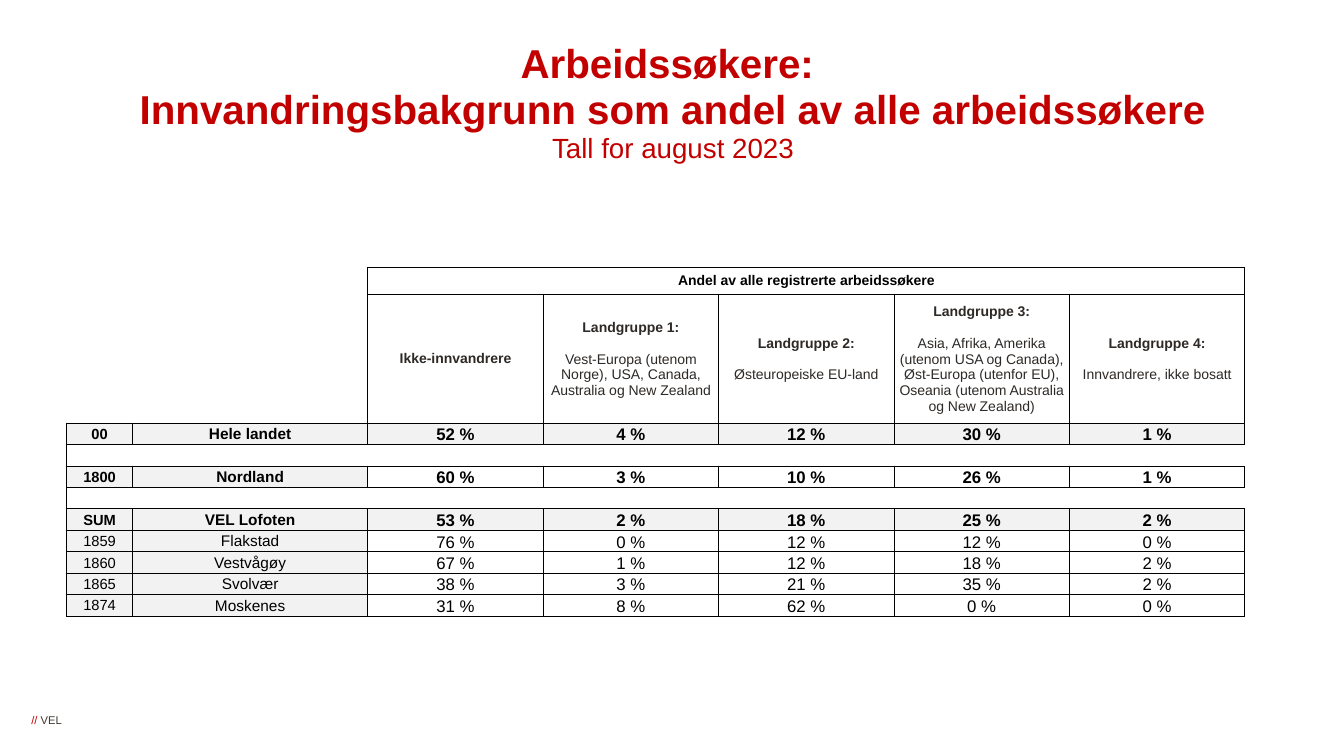
from lxml import etree
from pptx import Presentation
from pptx.dml.color import RGBColor
from pptx.enum.text import MSO_ANCHOR, PP_ALIGN
from pptx.oxml.ns import qn
from pptx.util import Cm, Pt

CENTER = PP_ALIGN.CENTER
MIDDLE, BOTTOM = MSO_ANCHOR.MIDDLE, MSO_ANCHOR.BOTTOM
RED = RGBColor(0xC3, 0x00, 0x00)
BROWN = RGBColor(0x3E, 0x38, 0x32)
CHARCOAL = RGBColor(0x2D, 0x29, 0x26)
BLACK = RGBColor(0, 0, 0)
WHITE = RGBColor(0xFF, 0xFF, 0xFF)
GREY = RGBColor(0xF2, 0xF2, 0xF2)
FONT = "Arial"
NO_GRID_STYLE = "{2D5ABB26-0587-4C30-8999-92F81FD0307C}"

TITLE_LINES = [
    ("Arbeidssøkere: ", 28.8, True),
    ("Innvandringsbakgrunn som andel av alle arbeidssøkere", 28.8, True),
    ("Tall for august 2023", 19.8, False),
]
FOOTER = [("// ", RED), ("VEL", BROWN)]
SHARE_HEADING = "Andel av alle registrerte arbeidssøkere"
GROUPS = [
    ("Ikke-innvandrere", None),
    ("Landgruppe 1:", "Vest-Europa (utenom Norge), USA, Canada, Australia og New Zealand"),
    ("Landgruppe 2:", "Østeuropeiske EU-land"),
    ("Landgruppe 3:", "Asia, Afrika, Amerika (utenom USA og Canada), Øst-Europa "
                      "(utenfor EU), Oseania (utenom Australia og New Zealand)"),
    ("Landgruppe 4:", "Innvandrere, ikke bosatt"),
]
# code, area, shares in percent, bold, fill of the shares; None is a spacer row
AREAS = [
    ("00", "Hele landet", (52, 4, 12, 30, 1), True, GREY),
    None,
    ("1800", "Nordland", (60, 3, 10, 26, 1), True, None),
    None,
    ("SUM", "VEL Lofoten", (53, 2, 18, 25, 2), True, GREY),
    ("1859", "Flakstad", (76, 0, 12, 12, 0), False, None),
    ("1860", "Vestvågøy", (67, 1, 12, 18, 2), False, None),
    ("1865", "Svolvær", (38, 3, 21, 35, 2), False, None),
    ("1874", "Moskenes", (31, 8, 62, 0, 0), False, None),
]
HEADER_ROWS, LABEL_COLS = 2, 3
COL_WIDTHS = [1.66, 5.77, 0.1] + [4.42] * len(GROUPS)
ROW_HEIGHTS = [0.68, 3.25] + [0.54] * len(AREAS)


def style_run(run, size, color, bold=False):
    run.font.name = FONT
    run.font.size = Pt(size)
    run.font.color.rgb = color
    run.font.bold = bold


def set_borders(cell, sides):
    """Draw the sides named by the letters L, R, T and B."""
    props = cell._tc.get_or_add_tcPr()
    for position, side in enumerate(s for s in "LRTB" if s in sides):
        line = etree.Element(qn(f"a:ln{side}"), w=str(Pt(0.5)))
        fill = etree.SubElement(line, qn("a:solidFill"))
        etree.SubElement(fill, qn("a:srgbClr"), val=str(BLACK))
        props.insert(position, line)


def set_fill(cell, color):
    if color is None:
        cell.fill.background()
    else:
        cell.fill.solid()
        cell.fill.fore_color.rgb = color


def write_cell(cell, lines, size, color=BLACK, fill=None, anchor=MIDDLE):
    """Write one centred paragraph for each (text, bold) in lines."""
    cell.vertical_anchor = anchor
    set_fill(cell, fill)
    frame = cell.text_frame
    frame.text = "\n".join(text for text, _ in lines)
    for position, (paragraph, (_, bold)) in enumerate(zip(frame.paragraphs, lines)):
        paragraph.alignment = CENTER
        if position:
            paragraph.space_before = Pt(11.5)
        style_run(paragraph.runs[0], size, color, bold)


def add_title(slide):
    box = slide.shapes.add_textbox(Cm(0.3), Cm(1.12), Cm(33.32), Cm(2.97))
    box.text_frame.word_wrap = True
    box.text_frame.vertical_anchor = MIDDLE
    title = box.text_frame.paragraphs[0]
    title.text = "\v".join(text for text, _, _ in TITLE_LINES)
    title.alignment = CENTER
    title.line_spacing = 0.95
    for run, (_, size, bold) in zip(title.runs, TITLE_LINES):
        style_run(run, size, RED, bold)


def add_footer(slide):
    frame = slide.shapes.add_textbox(Cm(0.79), Cm(17.98), Cm(0.89), Cm(0.33)).text_frame
    frame.word_wrap = False
    frame.margin_left = frame.margin_right = frame.margin_top = frame.margin_bottom = 0
    for text, color in FOOTER:
        run = frame.paragraphs[0].add_run()
        run.text = text
        style_run(run, 8, color)


def prepare_cells(table):
    """Set margins, borders and the size of empty lines in every cell."""
    for row in range(len(ROW_HEIGHTS)):
        for col in range(len(COL_WIDTHS)):
            cell = table.cell(row, col)
            cell.margin_left = cell.margin_right = cell.margin_top = Cm(0.03)
            cell.margin_bottom = 0
            set_fill(cell, None)
            end = etree.SubElement(cell.text_frame.paragraphs[0]._p, qn("a:endParaRPr"))
            end.set("sz", "1000")
            sides = "LRTB"
            if row < HEADER_ROWS and col < LABEL_COLS:
                sides = ("R" if col == LABEL_COLS - 1 else "") + ("B" if row else "")
            elif row >= HEADER_ROWS and AREAS[row - HEADER_ROWS] is None:
                sides = "TB" + ("L" if col == 0 else "")
            set_borders(cell, sides)


def add_share_table(slide):
    frame = slide.shapes.add_table(
        len(ROW_HEIGHTS), len(COL_WIDTHS), Cm(1.68), Cm(6.73),
        Cm(sum(COL_WIDTHS)), Cm(sum(ROW_HEIGHTS)))
    table = frame.table
    table.first_row = table.horz_banding = False
    table._tbl.tblPr.find(qn("a:tableStyleId")).text = NO_GRID_STYLE
    for column, width in zip(table.columns, COL_WIDTHS):
        column.width = Cm(width)
    for row, height in zip(table.rows, ROW_HEIGHTS):
        row.height = Cm(height)
    prepare_cells(table)

    heading = table.cell(0, LABEL_COLS)
    heading.merge(table.cell(0, len(COL_WIDTHS) - 1))
    write_cell(heading, [(SHARE_HEADING, True)], 10, fill=WHITE)
    for col, (group, countries) in enumerate(GROUPS, LABEL_COLS):
        lines = [(group, True)] + ([(countries, False)] if countries else [])
        write_cell(table.cell(1, col), lines, 10, CHARCOAL, WHITE)

    for row, area in enumerate(AREAS, HEADER_ROWS):
        last_label = table.cell(row, LABEL_COLS - 1)
        if area is None:
            table.cell(row, 0).merge(last_label)
            set_fill(table.cell(row, 0), WHITE)
            continue
        code, name, shares, bold, fill = area
        table.cell(row, 1).merge(last_label)
        write_cell(table.cell(row, 0), [(code, bold)], 10.5, fill=GREY)
        write_cell(table.cell(row, 1), [(name, bold)], 11, fill=GREY)
        for col, share in enumerate(shares, LABEL_COLS):
            write_cell(table.cell(row, col), [(f"{share} %", bold)], 12,
                       fill=fill, anchor=BOTTOM)


def main():
    deck = Presentation()
    deck.slide_width, deck.slide_height = Cm(33.87), Cm(19.05)
    slide = deck.slides.add_slide(deck.slide_layouts[6])
    add_footer(slide)
    add_title(slide)
    add_share_table(slide)
    deck.save("out.pptx")


if __name__ == "__main__":
    main()
